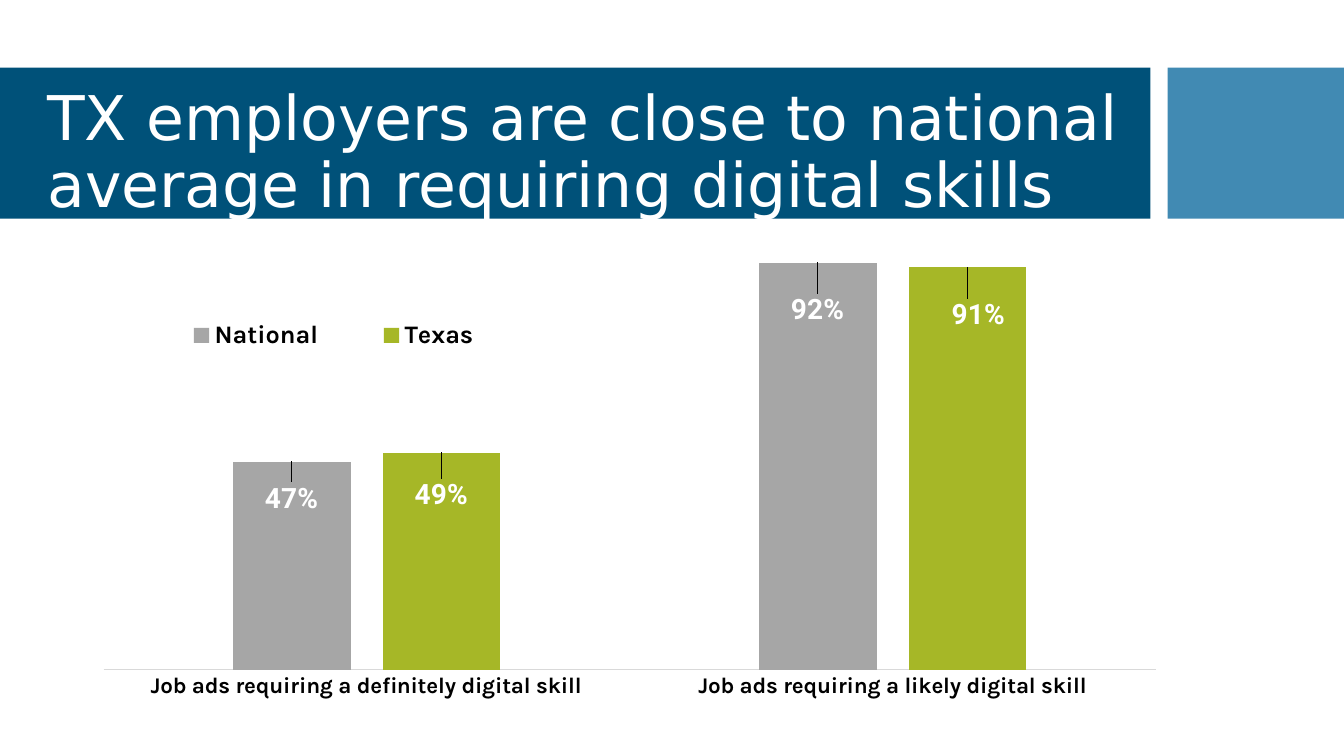
from lxml import etree
from pptx import Presentation
from pptx.chart.data import CategoryChartData
from pptx.dml.color import RGBColor
from pptx.enum.chart import XL_CHART_TYPE as ChartType
from pptx.enum.chart import XL_LABEL_POSITION as LabelPosition
from pptx.enum.chart import XL_LEGEND_POSITION as LegendPosition
from pptx.enum.chart import XL_TICK_LABEL_POSITION as TickLabels
from pptx.enum.chart import XL_TICK_MARK as TickMark
from pptx.enum.shapes import MSO_SHAPE as Preset
from pptx.enum.text import MSO_ANCHOR as Anchor
from pptx.enum.text import MSO_AUTO_SIZE as AutoSize
from pptx.enum.text import PP_ALIGN as Align
from pptx.oxml.ns import qn
from pptx.util import Inches, Pt

NAVY = RGBColor(0x00, 0x51, 0x79)
SKY = RGBColor(0x41, 0x8A, 0xB3)
GRAY = RGBColor(0xA6, 0xA6, 0xA6)
GREEN = RGBColor(0xA6, 0xB7, 0x27)
AXIS_GRAY = RGBColor(0xD9, 0xD9, 0xD9)
BLACK = RGBColor(0, 0, 0)
WHITE = RGBColor(0xFF, 0xFF, 0xFF)

SLIDE_WIDTH, SLIDE_HEIGHT = 13.33, 7.5
HEADLINE = "TX employers are close to national average in requiring digital skills"
CATEGORIES = [
    "Job ads requiring a definitely digital skill",
    "Job ads requiring a likely digital skill",
]
# Name, colour, values, and the shift of each value label inside its bar
SERIES = [
    ("National", GRAY, (0.47, 0.92), ((0, 0.03), (0, 0.05))),
    ("Texas", GREEN, (0.49, 0.91), ((0, 0.04), (0.01, 0.05))),
]


def style_font(font, name, size, color, bold=False):
    font.name, font.size, font.bold = name, Pt(size), bold
    font.color.rgb = color


def place_manually(host, after=None, **settings):
    """Give a chart part a manual layout, in fractions of the chart."""
    for old_layout in host.findall(qn("c:layout")):
        host.remove(old_layout)
    layout = etree.Element(qn("c:layout"))
    manual = etree.SubElement(layout, qn("c:manualLayout"))
    for tag, value in settings.items():
        etree.SubElement(manual, qn(f"c:{tag}")).set("val", str(value))
    if after:
        host.find(qn(after)).addnext(layout)
    else:
        host.insert(0, layout)


def add_header(slide, left, top, width, height):
    title = slide.shapes.title

    # Wide band and accent block, behind the title
    accent_width, gap = 1.75, 0.17
    band_width = width - accent_width - gap
    for x, block_width, color in (
        (left, band_width, NAVY),
        (left + band_width + gap, accent_width, SKY),
    ):
        block = slide.shapes.add_shape(
            Preset.RECTANGLE, Inches(x), Inches(top), Inches(block_width), Inches(height)
        )
        block.shadow.inherit = False
        block.fill.solid()
        block.fill.fore_color.rgb = color
        block.line.fill.background()
        title.element.addprevious(block.element)

    # Headline
    title.left, title.top = Inches(left + 0.37), Inches(top + 0.11)
    title.width, title.height = Inches(11.46), Inches(height)
    frame = title.text_frame
    frame.text = HEADLINE
    frame.word_wrap = True
    frame.auto_size = AutoSize.NONE
    frame.vertical_anchor = Anchor.MIDDLE
    paragraph = frame.paragraphs[0]
    paragraph.alignment = Align.LEFT
    paragraph.line_spacing = 0.9
    style_font(paragraph.font, "DejaVu Sans", 44, WHITE)


def add_skills_chart(slide, left, top, width, height):
    data = CategoryChartData(number_format="0%")
    data.categories = CATEGORIES
    for name, _, values, _ in SERIES:
        data.add_series(name, values)
    chart = slide.shapes.add_chart(
        ChartType.COLUMN_CLUSTERED,
        Inches(left), Inches(top), Inches(width), Inches(height), data,
    ).chart
    chart.has_title = False
    style_font(chart.font, "Karla", 10, BLACK)

    # Axes
    value_axis = chart.value_axis
    value_axis.visible = False
    value_axis.has_major_gridlines = False
    value_axis.minimum_scale, value_axis.maximum_scale = 0, 1
    category_axis = chart.category_axis
    category_axis.major_tick_mark = TickMark.NONE
    category_axis.tick_label_position = TickLabels.NEXT_TO_AXIS
    category_axis.format.line.color.rgb = AXIS_GRAY
    category_axis.format.line.width = Pt(0.75)
    style_font(category_axis.tick_labels.font, "Karla", 16, BLACK, bold=True)

    # Bars and their value labels
    plot = chart.plots[0]
    plot.gap_width, plot.overlap = 219, -27
    plot.vary_by_categories = False
    for series, (_, color, _, shifts) in zip(plot.series, SERIES):
        series.format.fill.solid()
        series.format.fill.fore_color.rgb = color
        labels = series.data_labels
        labels.show_value = True
        labels.number_format, labels.number_format_is_linked = "0%", False
        labels.position = LabelPosition.INSIDE_END
        style_font(labels.font, "Roboto", 20, WHITE, bold=True)
        for index in range(len(shifts)):
            point_label = series.points[index].data_label
            style_font(point_label.font, "Roboto", 20, WHITE, bold=True)
            point_label.position = LabelPosition.INSIDE_END
    all_shifts = [shift for *_, shifts in SERIES for shift in shifts]
    for label, (x, y) in zip(chart.element.xpath(".//c:dLbl"), all_shifts):
        place_manually(label, after="c:idx", x=x, y=y)

    # Legend and plot positions
    chart.has_legend = True
    legend = chart.legend
    legend.position = LegendPosition.BOTTOM
    legend.include_in_layout = False
    style_font(legend.font, "Karla", 18, BLACK, bold=True)
    place_manually(
        chart.element.xpath(".//c:legend")[0], after="c:legendPos",
        xMode="edge", yMode="edge", x=0.05, y=0.17, w=0.36, h=0.1,
    )
    place_manually(
        chart.element.xpath(".//c:plotArea")[0], layoutTarget="inner",
        xMode="edge", yMode="edge", x=0.02, y=0.02, w=0.96, h=0.82,
    )


def main():
    deck = Presentation()
    deck.slide_width, deck.slide_height = Inches(SLIDE_WIDTH), Inches(SLIDE_HEIGHT)
    slide = deck.slides.add_slide(deck.slide_layouts[5])
    add_header(slide, 0, 0.67, SLIDE_WIDTH, 1.5)
    add_skills_chart(slide, 0.81, 2.15, 10.87, 5.35)
    deck.save("out.pptx")


if __name__ == "__main__":
    main()
